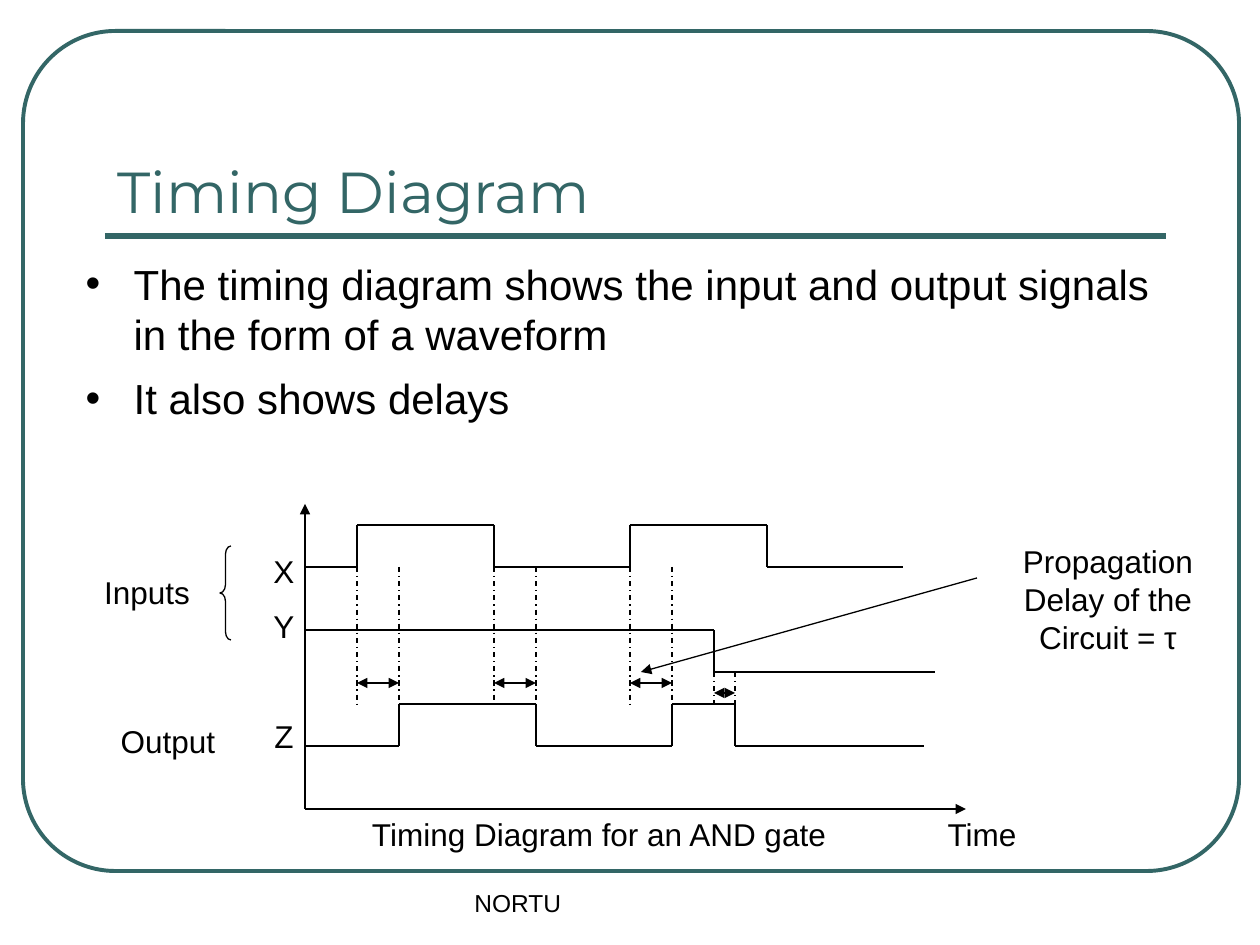
from itertools import pairwise

from lxml import etree
from pptx import Presentation
from pptx.dml.color import RGBColor
from pptx.enum.dml import MSO_LINE
from pptx.enum.shapes import MSO_CONNECTOR, MSO_SHAPE
from pptx.enum.text import MSO_ANCHOR, MSO_AUTO_SIZE, PP_ALIGN
from pptx.oxml.ns import qn
from pptx.util import Emu, Pt

STRAIGHT = MSO_CONNECTOR.STRAIGHT
DASH_DOT = MSO_LINE.DASH_DOT
ROUNDED, BRACE = MSO_SHAPE.ROUNDED_RECTANGLE, MSO_SHAPE.LEFT_BRACE
TOP, BOTTOM = MSO_ANCHOR.TOP, MSO_ANCHOR.BOTTOM
LEFT, CENTER = PP_ALIGN.LEFT, PP_ALIGN.CENTER
NO_FIT = MSO_AUTO_SIZE.NONE
PX = 914400 // 126
TEAL, BLACK = "336666", "000000"

# Content
TITLE = "Timing Diagram"
BULLETS = [
    "The timing diagram shows the input and output signals in the form of a waveform",
    "It also shows delays",
]
LABELS = [  # text, left, top, width, height
    ("Propagation Delay of the Circuit = τ", 987, 536, 242, 126),
    ("Inputs", 84, 567, 126, 50),
    ("Output", 105, 716, 126, 50),
    ("Timing Diagram for an AND gate", 242, 809, 714, 50),
    ("Time", 872, 809, 220, 50),
]
SIGNAL_NAMES = [("X", 0), ("Y", 10), ("Z", 41)]  # name, points above
FOOTER = "NORTU"

# Waveforms: low level, high level, starts high, switching times, end
AXIS_X, AXIS_Y = 305, 809
SIGNALS = [
    (567, 525, False, [357, 494, 630, 767], 903),
    (672, 630, True, [714], 935),
    (746, 704, False, [399, 536, 672, 735], 924),
]
DELAYS = [  # start, end, top of guides, height of arrow
    (357, 399, 567, 683),
    (494, 536, 567, 683),
    (630, 672, 567, 683),
    (714, 735, 672, 693),
]
GUIDE_BOTTOM = 704


def rgb(value):
    return RGBColor.from_string(value)


def px(*values):
    return [Emu(value * PX) for value in values]


def add_line(start, end, color=BLACK, width=0.75, dash=None, arrows=()):
    line = slide.shapes.add_connector(STRAIGHT, *px(*start, *end))
    line.line.color.rgb = rgb(color)
    line.line.width = Pt(width)
    if dash:
        line.line.dash_style = dash
    outline = line.line._get_or_add_ln()
    for arrow in arrows:
        etree.SubElement(outline, qn(f"a:{arrow}"), type="triangle")
    etree.SubElement(line._element.spPr, qn("a:effectLst"))


def add_outline(kind, place, adjustments, color, width):
    shape = slide.shapes.add_shape(kind, *px(*place))
    shape.shadow.inherit = False
    shape.fill.background()
    shape.line.color.rgb = rgb(color)
    shape.line.width = Pt(width)
    for index, value in enumerate(adjustments):
        shape.adjustments[index] = value


def write(box, texts, size, font="Arial", color=BLACK, anchor=TOP, **paragraph_format):
    frame = box.text_frame
    frame.word_wrap = True
    frame.auto_size = NO_FIT
    frame.vertical_anchor = anchor
    for index, text in enumerate(texts):
        para = frame.paragraphs[0] if index == 0 else frame.add_paragraph()
        for name, value in paragraph_format.items():
            setattr(para, name, value)
        span = para.add_run()
        span.text = text
        span.font.name = font
        span.font.size = Pt(size)
        span.font.color.rgb = rgb(color)
    return frame.paragraphs


def place_on(box, left, top, width, height):
    box.left, box.top, box.width, box.height = px(left, top, width, height)


deck = Presentation()
deck.slide_width, deck.slide_height = px(1260, 945)
slide = deck.slides.add_slide(deck.slide_layouts[1])
title, body = slide.shapes.title, slide.placeholders[1]

# Frame and title rule
add_outline(ROUNDED, (23, 31, 1216, 840), [0.11], TEAL, 2.25)
add_line((105, 236), (1166, 236), TEAL, 3)

# Title and bullets
place_on(title, 105, 73, 1060, 158)
write(title, [TITLE], 33, "Montserrat", TEAL, BOTTOM, alignment=LEFT)
place_on(body, 73, 252, 1091, 252)
for para in write(body, BULLETS, 24, alignment=LEFT, space_before=Pt(7.8)):
    properties = para._p.get_or_add_pPr()
    properties.set("marL", str(48 * PX))
    properties.set("indent", str(-48 * PX))
    bullet_color = etree.SubElement(properties, qn("a:buClr"))
    etree.SubElement(bullet_color, qn("a:srgbClr"), val=BLACK)
    etree.SubElement(properties, qn("a:buChar"), char="•")

# Axes
add_line((AXIS_X, AXIS_Y), (AXIS_X, 504), arrows=["tailEnd"])
add_line((AXIS_X, AXIS_Y), (966, AXIS_Y), arrows=["tailEnd"])

# Signals
for low, high, is_high, switches, end in SIGNALS:
    level = high if is_high else low
    points = [(AXIS_X, level)]
    for time in switches:
        points.append((time, level))
        level = low + high - level
        points.append((time, level))
    points.append((end, level))
    for start, stop in pairwise(points):
        add_line(start, stop)

# Delay guides and arrows
for start, end, guide_top, arrow_y in DELAYS:
    for time in (start, end):
        add_line((time, guide_top), (time, GUIDE_BOTTOM), dash=DASH_DOT)
    add_line((start, arrow_y), (end, arrow_y), arrows=["headEnd", "tailEnd"])
add_line((977, 578), (641, 672), arrows=["tailEnd"])

# Labels
names_box = slide.shapes.add_textbox(*px(242, 546, 84, 222))
name_paras = write(names_box, [name for name, _ in SIGNAL_NAMES], 18, alignment=CENTER)
for para, (_, gap) in zip(name_paras, SIGNAL_NAMES):
    para.space_before = Pt(gap)
add_outline(BRACE, (220, 546, 11, 94), [0.75, 0.5], BLACK, 0.75)
for text, *place in LABELS:
    write(slide.shapes.add_textbox(*px(*place)), [text], 18, alignment=CENTER)

# Footer
write(slide.shapes.add_textbox(*px(462, 882, 398, 63)), [FOOTER], 14)

deck.save("out.pptx")
